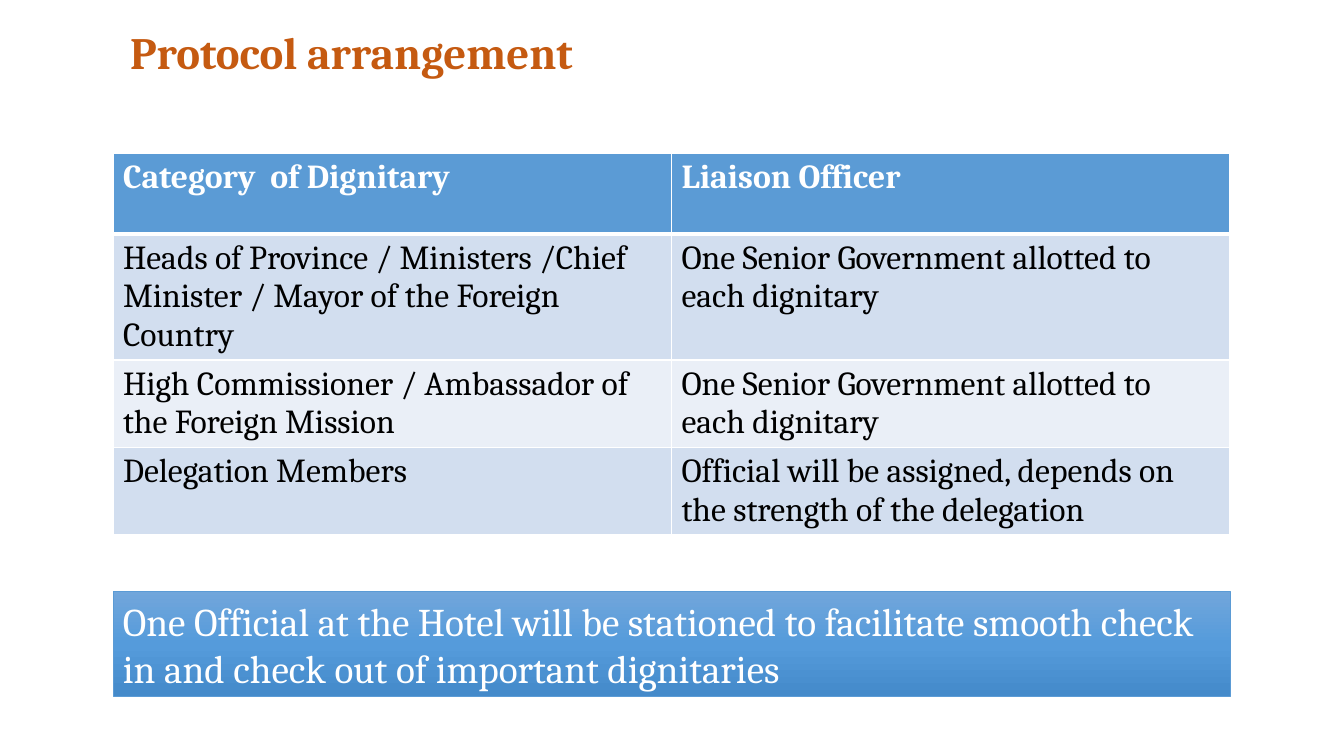
import copy

import lxml.etree
import pptx
import pptx.dml.color
import pptx.enum.dml
import pptx.enum.shapes
import pptx.enum.text
import pptx.oxml.ns
import pptx.util

Inches = pptx.util.Inches


def color(value):
    return pptx.dml.color.RGBColor.from_string(value)


def format_text(text_frame, size, font_color, bold=False):
    text_frame.word_wrap = True
    paragraph = text_frame.paragraphs[0]
    paragraph.alignment = pptx.enum.text.PP_ALIGN.LEFT
    for run in paragraph.runs:
        run.font.name = "Cambria"
        run.font.size = pptx.util.Pt(size)
        run.font.bold = bold
        run.font.color.rgb = color(font_color)


presentation = pptx.Presentation()
presentation.slide_width = Inches(13.33)
presentation.slide_height = Inches(7.5)
slide = presentation.slides.add_slide(presentation.slide_layouts[5])

title = slide.shapes.title
title.left, title.top = Inches(1.19), Inches(0.25)
title.width, title.height = Inches(10.94), Inches(0.59)
title.text_frame.text = "Protocol arrangement"
title.text_frame.auto_size = pptx.enum.text.MSO_AUTO_SIZE.NONE
title.text_frame.vertical_anchor = pptx.enum.text.MSO_ANCHOR.MIDDLE
title.text_frame.paragraphs[0].line_spacing = 0.9
format_text(title.text_frame, 32, "C55A11", True)

rows = [
    ("Category  of Dignitary", "Liaison Officer"),
    ("Heads of Province / Ministers /Chief Minister / Mayor of the Foreign Country",
     "One Senior Government allotted to each dignitary"),
    ("High Commissioner / Ambassador of the Foreign Mission",
     "One Senior Government allotted to each dignitary"),
    ("Delegation Members",
     "Official will be assigned, depends on the strength of the delegation"),
]
row_fills = ["5B9BD5", "D2DEEF", "EAEFF7", "D2DEEF"]
table = slide.shapes.add_table(
    len(rows), 2, Inches(1.12), Inches(1.52), Inches(11.08), Inches(3.2)
).table

for row_index, texts in enumerate(rows):
    is_header = row_index == 0
    border_widths = {"lnL": 1, "lnR": 1, "lnT": 3 if row_index == 1 else 1, "lnB": 3 if is_header else 1}
    for column_index, text in enumerate(texts):
        cell = table.cell(row_index, column_index)
        cell.text_frame.text = text
        format_text(cell.text_frame, 24, "FFFFFF" if is_header else "000000", is_header)
        cell.fill.solid()
        cell.fill.fore_color.rgb = color(row_fills[row_index])
        properties = cell._tc.get_or_add_tcPr()
        for position, (side, width) in enumerate(border_widths.items()):
            border = lxml.etree.Element(pptx.oxml.ns.qn("a:" + side), w=str(pptx.util.Pt(width)))
            solid = lxml.etree.SubElement(border, pptx.oxml.ns.qn("a:solidFill"))
            lxml.etree.SubElement(solid, pptx.oxml.ns.qn("a:srgbClr"), val="FFFFFF")
            properties.insert(position, border)

banner = slide.shapes.add_shape(
    pptx.enum.shapes.MSO_SHAPE.RECTANGLE, Inches(1.12), Inches(5.87), Inches(11.08), Inches(1.04)
)
banner.shadow.inherit = False
banner.line.color.rgb = color("5B9BD5")
banner.line.width = pptx.util.Pt(0.5)
banner.fill.gradient()
banner.fill.gradient_angle = 270
stop_list = banner._element.spPr.find(".//" + pptx.oxml.ns.qn("a:gsLst"))
stop_list.insert(1, copy.deepcopy(stop_list[0]))
gradient = [(0, "71A6DB"), (0.5, "559BDB"), (1, "448ACA")]
for stop, (position, stop_color) in zip(banner.fill.gradient_stops, gradient):
    stop.position = position
    stop.color.rgb = color(stop_color)
banner.text_frame.text = (
    "One Official at the Hotel will be stationed to facilitate smooth check in "
    "and check out of important dignitaries"
)
banner.text_frame.auto_size = pptx.enum.text.MSO_AUTO_SIZE.SHAPE_TO_FIT_TEXT
banner.text_frame.vertical_anchor = pptx.enum.text.MSO_ANCHOR.MIDDLE
format_text(banner.text_frame, 28, "FFFFFF")

presentation.save("out.pptx")
